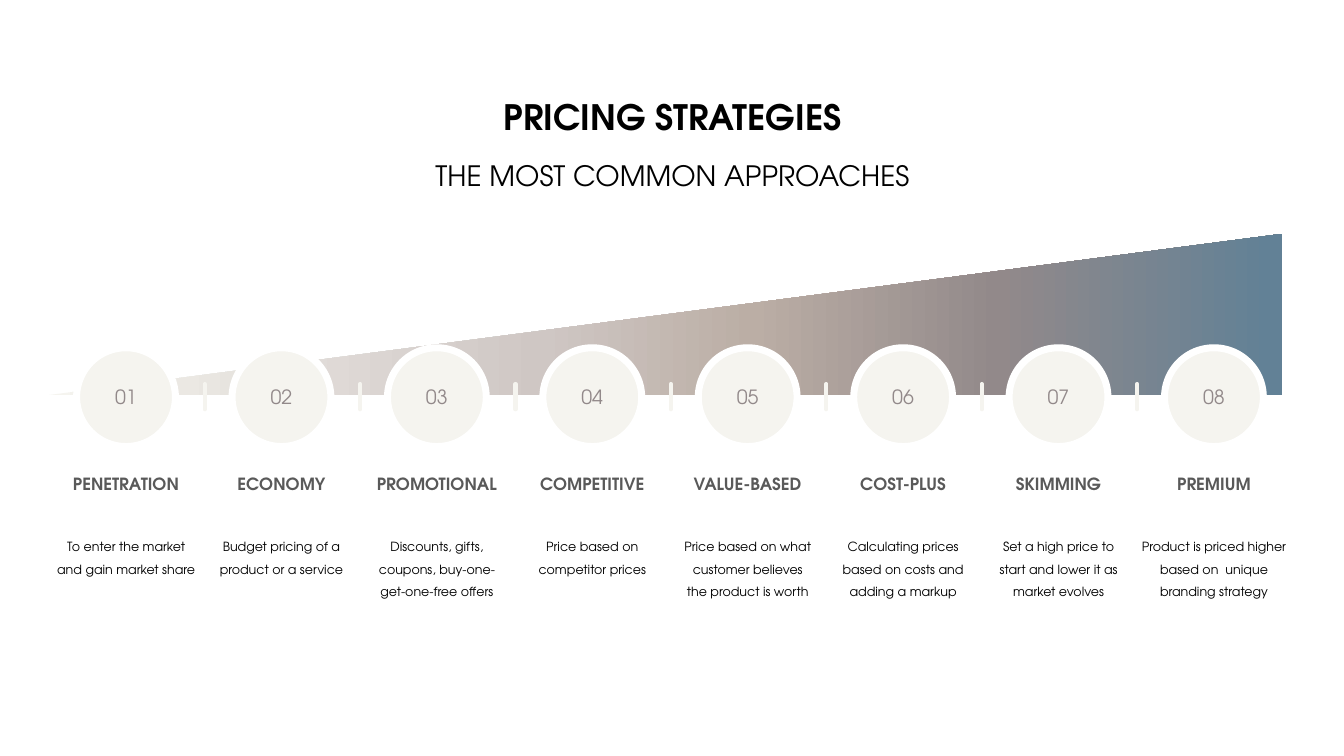
from dataclasses import dataclass

from lxml.etree import SubElement
from pptx import Presentation
from pptx.dml.color import RGBColor
from pptx.enum.shapes import MSO_CONNECTOR as Connector
from pptx.enum.shapes import MSO_SHAPE as Preset
from pptx.enum.text import MSO_ANCHOR as Anchor
from pptx.enum.text import MSO_AUTO_SIZE as AutoSize
from pptx.enum.text import PP_ALIGN as Align
from pptx.oxml import parse_xml
from pptx.oxml.ns import nsdecls, qn
from pptx.slide import Slide
from pptx.text.text import TextFrame, _Paragraph as Paragraph
from pptx.util import Inches, Length, Pt


@dataclass(frozen=True)
class TextStyle:
    size: int
    color: str
    bold: bool = False
    spacing: float | Length | None = None


@dataclass(frozen=True)
class Theme:
    font: str = "TeX Gyre Adventor"
    paper: str = "FFFFFF"
    cream: str = "F5F4EF"
    wedge: tuple = ((0, "F5F4EF"), (40, "CFC7C4"), (57, "BBAEA5"),
                    (77, "92898A"), (99, "628196"))
    title: TextStyle = TextStyle(25, "000000", True, Pt(34))
    subtitle: TextStyle = TextStyle(20, "000000", False, Pt(39))
    number: TextStyle = TextStyle(14, "92898A")
    name: TextStyle = TextStyle(12, "595959", True, Pt(15))
    detail: TextStyle = TextStyle(9, "000000", False, 1.5)


@dataclass(frozen=True)
class Strategy:
    name: str
    detail: str
    detail_width: float = 1.54


THEME = Theme()
STRATEGIES = [
    Strategy("PENETRATION", "To enter the market and gain market share", 1.65),
    Strategy("ECONOMY", "Budget pricing of a product or a service"),
    Strategy("PROMOTIONAL", "Discounts, gifts, coupons, buy-one-get-one-free offers"),
    Strategy("COMPETITIVE", "Price based on competitor prices", 1.36),
    Strategy("VALUE-BASED", "Price based on what customer believes the product is worth"),
    Strategy("COST-PLUS", "Calculating prices based on costs and adding a markup"),
    Strategy("SKIMMING", "Set a high price to start and lower it as market evolves", 1.45),
    Strategy("PREMIUM", "Product is priced higher based on  unique branding strategy", 1.72),
]
FIRST_CENTER, LAST_CENTER = 1.25, 12.04
PITCH = (LAST_CENTER - FIRST_CENTER) / (len(STRATEGIES) - 1)
CIRCLE_TOP, DIAMETER = 3.45, 0.98
TICK_TOP, TICK_BOTTOM, TICK_OFFSET = 3.81, 4.06, 0.78
NAME_TOP, NAME_WIDTH, NAME_HEIGHT = 4.62, 1.54, 0.33
DETAIL_TOP, DETAIL_HEIGHT = 5.2, 0.79


def style_paragraph(para: Paragraph, style: TextStyle) -> None:
    para.alignment = Align.CENTER
    para.line_spacing = style.spacing
    for span in para.runs:
        span.font.name = THEME.font
        span.font.size = Pt(style.size)
        span.font.bold = style.bold
        span.font.color.rgb = RGBColor.from_string(style.color)


def set_margins(frame: TextFrame, across: float, down: float) -> None:
    frame.margin_left = frame.margin_right = Inches(across)
    frame.margin_top = frame.margin_bottom = Inches(down)


def add_heading(page: Slide) -> None:
    title = page.shapes.title
    title.left, title.top = Inches(4.19), Inches(0.84)
    title.width, title.height = Inches(4.96), Inches(1.05)
    frame = title.text_frame
    frame.text = "PRICING STRATEGIES\nTHE MOST COMMON APPROACHES"
    frame.word_wrap = False
    frame.auto_size = AutoSize.SHAPE_TO_FIT_TEXT
    frame.vertical_anchor = Anchor.TOP
    for para, style in zip(frame.paragraphs, (THEME.title, THEME.subtitle)):
        style_paragraph(para, style)


def add_wedge(page: Slide) -> None:
    """Draw the rising triangle, shaded from cream to blue."""
    wedge = page.shapes.add_shape(Preset.RIGHT_TRIANGLE, Inches(0.48), Inches(2.32),
                                  Inches(12.24), Inches(1.6))
    wedge.shadow.inherit = False
    wedge.line.fill.background()
    properties = wedge._element.spPr
    properties.find(qn("a:xfrm")).set("flipH", "1")
    stops = "".join(f'<a:gs pos="{percent * 1000}"><a:srgbClr val="{color}"/></a:gs>'
                    for percent, color in THEME.wedge)
    gradient = parse_xml(f'<a:gradFill {nsdecls("a")} rotWithShape="1"><a:gsLst>{stops}</a:gsLst>'
                         '<a:lin ang="10800000" scaled="0"/></a:gradFill>')
    properties.find(qn("a:prstGeom")).addnext(gradient)


def add_label(page: Slide, text: str, style: TextStyle, center: float,
              top: float, width: float, height: float) -> None:
    box = page.shapes.add_textbox(Inches(center - width / 2), Inches(top),
                                  Inches(width), Inches(height))
    frame = box.text_frame
    frame.text = text
    frame.word_wrap = True
    set_margins(frame, 0.13, 0.07)
    style_paragraph(frame.paragraphs[0], style)


def add_circle(page: Slide, number: int, center: float) -> None:
    circle = page.shapes.add_shape(Preset.OVAL, Inches(center - DIAMETER / 2),
                                   Inches(CIRCLE_TOP), Inches(DIAMETER), Inches(DIAMETER))
    circle.shadow.inherit = False
    circle.fill.solid()
    circle.fill.fore_color.rgb = RGBColor.from_string(THEME.cream)
    circle.line.color.rgb = RGBColor.from_string(THEME.paper)
    circle.line.width = Pt(5)
    frame = circle.text_frame
    frame.text = f"{number:02d}"
    frame.word_wrap = False
    frame.vertical_anchor = Anchor.MIDDLE
    set_margins(frame, 0.1, 0.1)
    style_paragraph(frame.paragraphs[0], THEME.number)


def add_tick(page: Slide, x: float) -> None:
    """Draw the short round-ended line between two circles."""
    tick = page.shapes.add_connector(Connector.STRAIGHT, Inches(x), Inches(TICK_TOP),
                                     Inches(x), Inches(TICK_BOTTOM))
    tick.line.color.rgb = RGBColor.from_string(THEME.cream)
    tick.line.width = Pt(3)
    properties = tick._element.spPr
    properties.find(qn("a:ln")).set("cap", "rnd")
    SubElement(properties, qn("a:effectLst"))


def main() -> None:
    deck = Presentation()
    deck.slide_width, deck.slide_height = Inches(13.33), Inches(7.5)
    page = deck.slides.add_slide(deck.slide_layouts.get_by_name("Title Only"))
    add_heading(page)
    add_wedge(page)
    for index, strategy in enumerate(STRATEGIES):
        center = FIRST_CENTER + index * PITCH
        add_label(page, strategy.name, THEME.name, center, NAME_TOP, NAME_WIDTH, NAME_HEIGHT)
        add_label(page, strategy.detail, THEME.detail, center, DETAIL_TOP,
                  strategy.detail_width, DETAIL_HEIGHT)
        add_circle(page, index + 1, center)
        if index < len(STRATEGIES) - 1:
            add_tick(page, center + TICK_OFFSET)
    deck.save("out.pptx")


if __name__ == "__main__":
    main()
